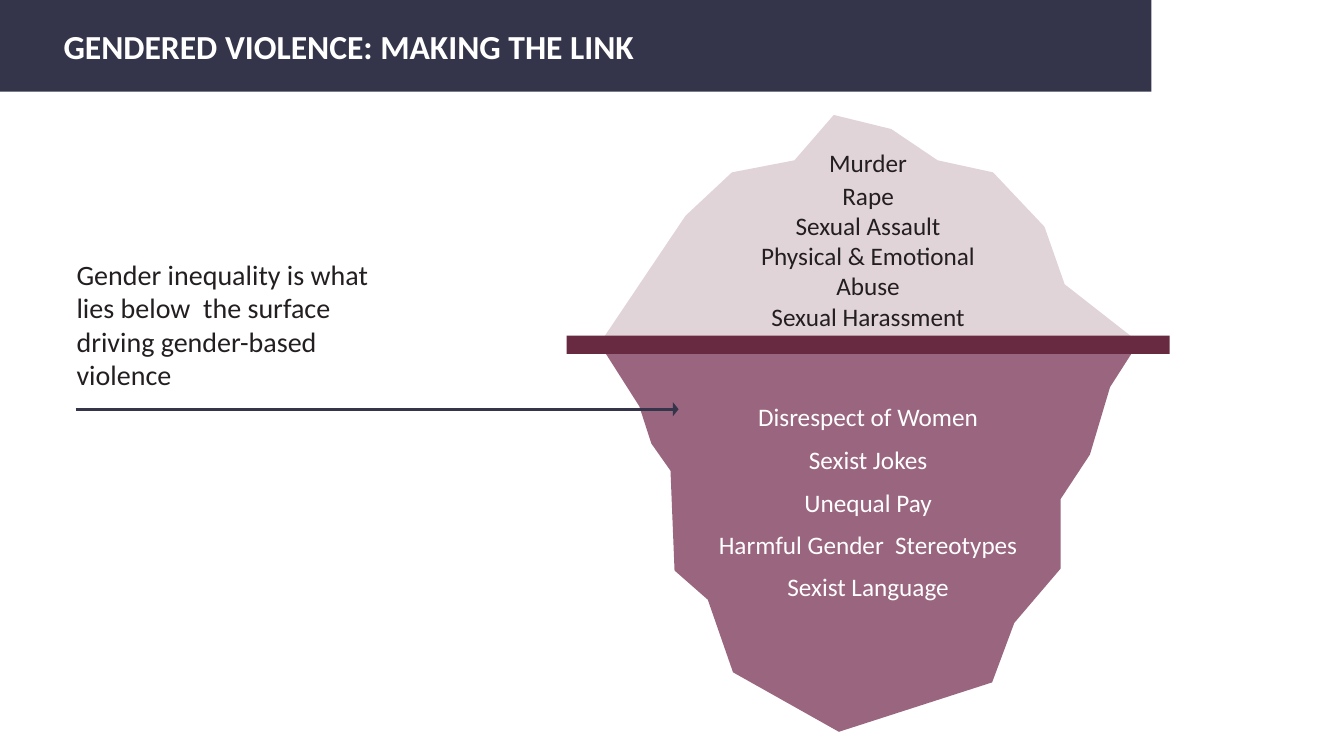
from pptx import Presentation, util as u
from pptx.dml.color import RGBColor
from pptx.enum import shapes, text
from pptx.oxml.ns import qn
from lxml import etree

NAVY, WHITE, INK = "34354A", "FFFFFF", "231F20"
PALE, MAUVE, WINE = "E1D4D8", "9A657F", "672A40"

TIP = [(8.27, 1.14), (7.88, 1.59), (7.26, 1.71), (6.8, 2.14), (5.98, 3.36), (11.25, 3.36),
       (10.56, 2.82), (10.36, 2.25), (9.85, 1.71), (9.3, 1.59), (8.84, 1.28)]
BASE = [(11.24, 3.48), (5.99, 3.48), (6.34, 4.03), (6.46, 4.4), (6.65, 4.67), (6.69, 5.66),
        (7.02, 5.95), (7.27, 6.67), (8.32, 7.26), (9.84, 6.77), (10.06, 6.18), (10.52, 5.64),
        (10.52, 4.95), (10.81, 4.51), (11.01, 3.84)]
VISIBLE = ["Murder", "Rape", "Sexual Assault", "Physical & Emotional Abuse", "Sexual Harassment"]
HIDDEN = ["Disrespect of Women", "Sexist Jokes", "Unequal Pay",
          "Harmful Gender  Stereotypes", "Sexist Language"]


def rgb(value):
    return RGBColor.from_string(value)


class Deck:
    """Holds the font and the current slide, and draws each kind of element."""

    def __init__(self, width, height, font):
        self.prs = Presentation()
        self.prs.slide_width, self.prs.slide_height = u.Inches(width), u.Inches(height)
        self.font = font
        self.s = self.prs.slides.add_slide(self.prs.slide_layouts[6])

    def paint(self, sp, color):
        sp.shadow.inherit = False
        sp.fill.solid()
        sp.fill.fore_color.rgb = rgb(color)
        sp.line.fill.background()

    def bar(self, x, y, w, h, color):
        sp = self.s.shapes.add_shape(shapes.MSO_SHAPE.RECTANGLE, *map(u.Inches, (x, y, w, h)))
        self.paint(sp, color)

    def outline(self, points, color):
        start, *rest = [(u.Inches(x), u.Inches(y)) for x, y in points]
        builder = self.s.shapes.build_freeform(*start)
        builder.add_line_segments(rest, close=True)
        self.paint(builder.convert_to_shape(), color)

    def text(self, x, y, w, h, lines, size, color, bold=False, align="LEFT",
             spacing=None, before=0, raised=0):
        tf = self.s.shapes.add_textbox(*map(u.Inches, (x, y, w, h))).text_frame
        tf.word_wrap = True
        tf.margin_left = tf.margin_top = tf.margin_right = tf.margin_bottom = 0
        for i, line in enumerate(lines):
            p = tf.paragraphs[0] if i == 0 else tf.add_paragraph()
            p.text = line
            p.alignment = text.PP_ALIGN[align]
            p.space_before = u.Pt(before if i < raised else 0)
            if spacing:
                p.line_spacing = spacing
            p.font.name, p.font.size, p.font.bold = self.font, u.Pt(size), bold
            p.font.color.rgb = rgb(color)

    def arrow(self, x1, y1, x2, y2, color, width):
        sp = self.s.shapes.add_connector(shapes.MSO_CONNECTOR.STRAIGHT,
                                         *map(u.Inches, (x1, y1, x2, y2)))
        sp.line.color.rgb = rgb(color)
        sp.line.width = u.Pt(width)
        etree.SubElement(sp.line._get_or_add_ln(), qn("a:tailEnd"),
                         type="triangle", w="lg", len="sm")
        etree.SubElement(sp._element.spPr, qn("a:effectLst"))


def main():
    d = Deck(13.33, 7.5, "Calibri")
    d.bar(0, 0, 11.42, 0.91, NAVY)
    d.text(0.63, 0.26, 10.19, 0.42, ["GENDERED VIOLENCE: MAKING THE LINK"], 24, WHITE, bold=True)
    d.outline(TIP, PALE)
    d.outline(BASE, MAUVE)
    d.bar(5.62, 3.33, 5.98, 0.18, WINE)
    d.text(7.41, 1.46, 2.4, 1.86, VISIBLE, 18, INK, align="CENTER", before=1.8, raised=2)
    d.text(6.9, 3.86, 3.42, 2.14, HIDDEN, 18, WHITE, align="CENTER",
           spacing=1.39, before=0.8, raised=3)
    d.text(0.76, 2.55, 3.03, 1.36,
           ["Gender inequality is what lies below  the surface driving gender-based violence"],
           20, INK)
    d.arrow(0.75, 4.06, 6.73, 4.06, NAVY, 2)
    d.prs.save("out.pptx")


if __name__ == "__main__":
    main()
